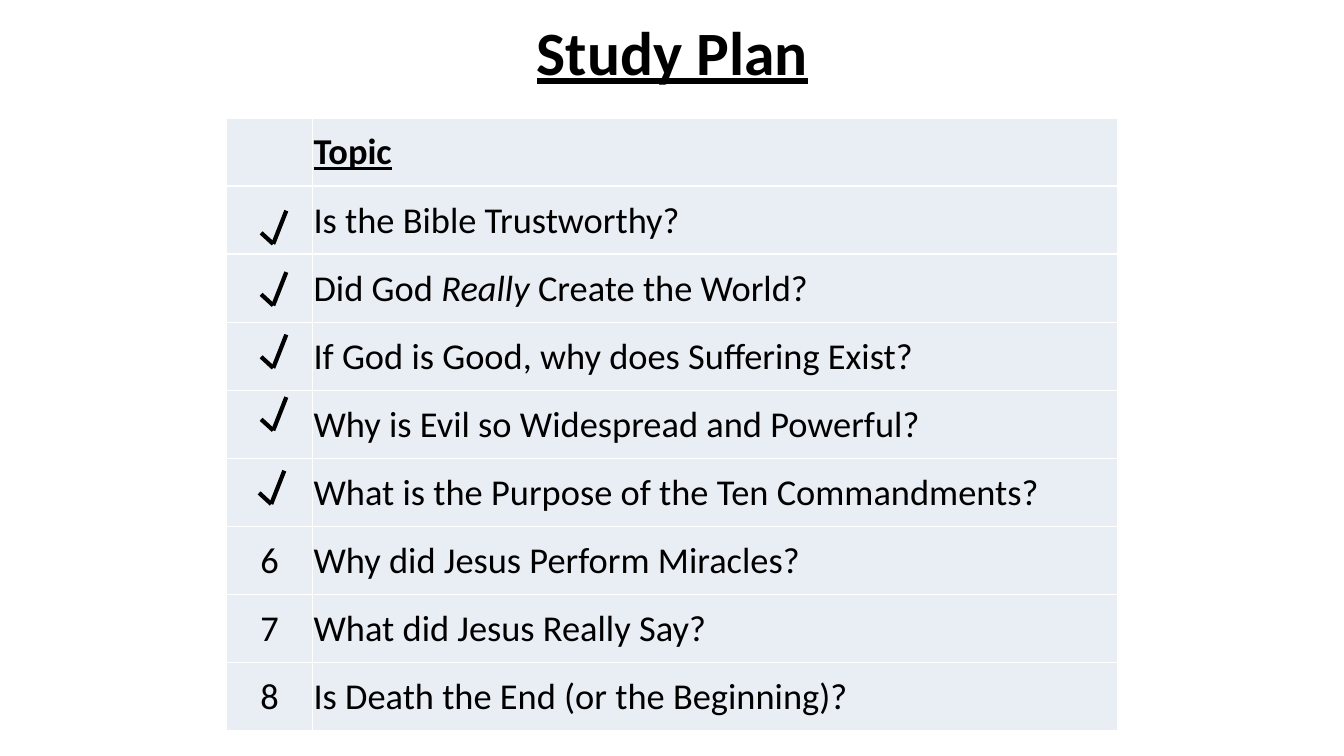
import pptx
import pptx.util
import pptx.dml.color
import pptx.enum.shapes
import pptx.enum.text
import pptx.oxml.ns
import lxml.etree

Inches = pptx.util.Inches
Pt = pptx.util.Pt
RGBColor = pptx.dml.color.RGBColor
MIDDLE = pptx.enum.text.MSO_ANCHOR.MIDDLE
CENTER = pptx.enum.text.PP_ALIGN.CENTER
qn = pptx.oxml.ns.qn

BLACK = RGBColor(0x00, 0x00, 0x00)
WHITE = RGBColor(0xFF, 0xFF, 0xFF)
PALE_BLUE = RGBColor(0xE9, 0xED, 0xF4)

# Each row: number, then the pieces of the topic; every second piece is italic.
ROWS = [
    ("", ["Topic"]),
    ("", ["Is the Bible Trustworthy?"]),
    ("", ["Did God ", "Really ", "Create the World?"]),
    ("", ["If God is Good, why does Suffering Exist?"]),
    ("", ["Why is Evil so Widespread and Powerful?"]),
    ("", ["What is the Purpose of the Ten Commandments?"]),
    ("6", ["Why did Jesus Perform Miracles?"]),
    ("7", ["What did Jesus Really Say?"]),
    ("8", ["Is Death the End (or the Beginning)?"]),
]
# Lowest point of each check mark
CHECK_TIPS = [(2.71, 2.42), (2.71, 3.03), (2.71, 3.65), (2.71, 4.27), (2.69, 5)]
# Offsets from the lowest point to the two ends of a check mark
CHECK_ENDS = [(-0.12, -0.11), (0.13, -0.33)]


def style_span(span, size, heading=False):
    span.font.name = "Calibri"
    span.font.size = Pt(size)
    span.font.color.rgb = BLACK
    span.font.bold = heading
    span.font.underline = heading


def add_cell_borders(cell):
    properties = cell._tc.get_or_add_tcPr()
    for side in ("lnL", "lnR", "lnT", "lnB"):
        border = lxml.etree.SubElement(properties, qn(f"a:{side}"), w=str(Pt(1)))
        fill = lxml.etree.SubElement(border, qn("a:solidFill"))
        lxml.etree.SubElement(fill, qn("a:srgbClr"), val=str(WHITE))


deck = pptx.Presentation()
deck.slide_width = Inches(13.33)
deck.slide_height = Inches(7.5)
page = deck.slides.add_slide(deck.slide_layouts[6])

title = page.shapes.add_textbox(Inches(4.42), Inches(0), Inches(4.5), Inches(1))
title.text_frame.word_wrap = True
title.text_frame.vertical_anchor = MIDDLE
title.text_frame.text = "Study Plan"
title_para = title.text_frame.paragraphs[0]
title_para.alignment = CENTER
style_span(title_para.runs[0], 44, heading=True)

table = page.shapes.add_table(
    len(ROWS), 2, Inches(2.25), Inches(1.17), Inches(8.83), Inches(6.08)
).table
table.first_row = False
table.horz_banding = False
table.columns[0].width = Inches(0.85)
table.columns[1].width = Inches(7.98)

for row, (number, topic) in enumerate(ROWS):
    for column, pieces in enumerate(([number] if number else [], topic)):
        cell = table.cell(row, column)
        add_cell_borders(cell)
        cell.fill.solid()
        cell.fill.fore_color.rgb = PALE_BLUE
        cell.vertical_anchor = MIDDLE
        cell.margin_left = cell.margin_right = cell.margin_top = Inches(0.01)
        cell.margin_bottom = Inches(0)
        para = cell.text_frame.paragraphs[0]
        if column == 0:
            para.alignment = CENTER
        for index, piece in enumerate(pieces):
            span = para.add_run()
            span.text = piece
            style_span(span, 26, heading=row == 0)
            span.font.italic = index % 2 == 1

for tip_x, tip_y in CHECK_TIPS:
    check = page.shapes.add_group_shape()
    for offset_x, offset_y in CHECK_ENDS:
        stroke = check.shapes.add_connector(
            pptx.enum.shapes.MSO_CONNECTOR.STRAIGHT,
            Inches(tip_x), Inches(tip_y),
            Inches(tip_x + offset_x), Inches(tip_y + offset_y),
        )
        stroke.line.color.rgb = BLACK
        stroke.line.width = Pt(3)
        lxml.etree.SubElement(stroke._element.spPr, qn("a:effectLst"))

deck.save("out.pptx")
